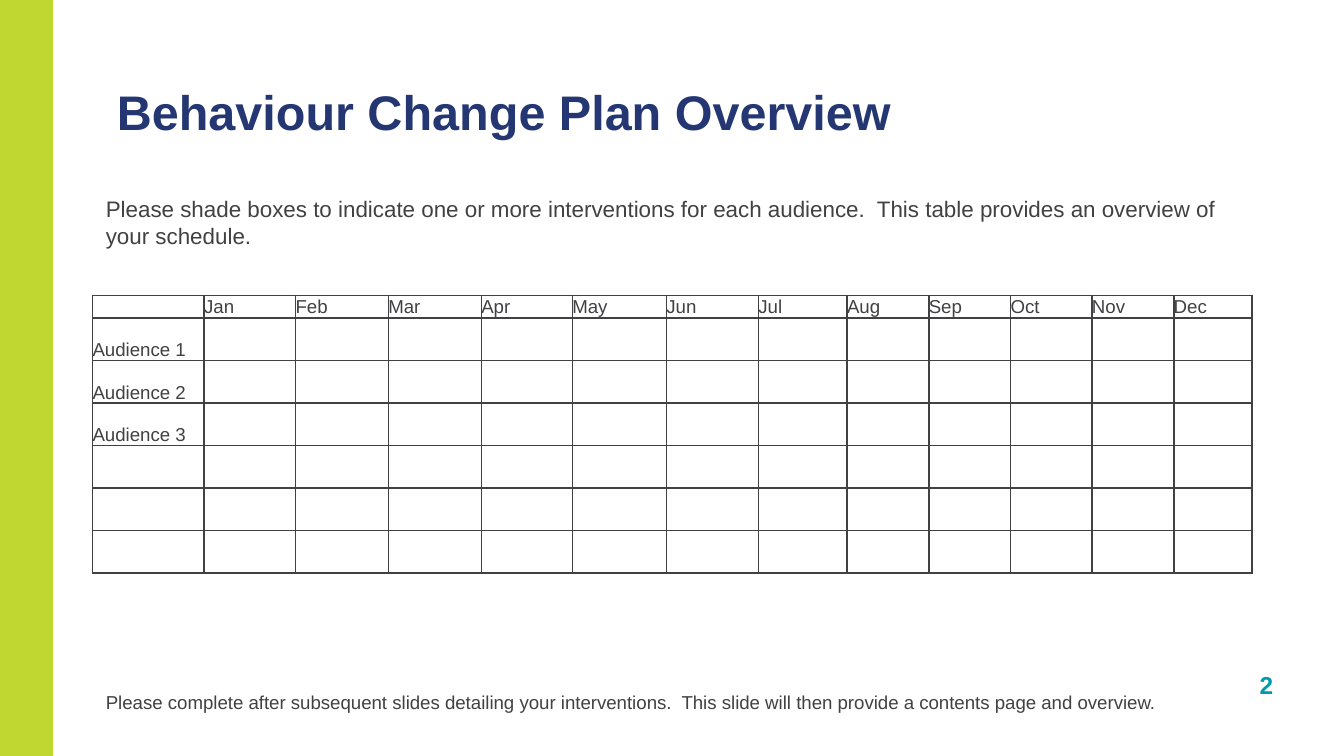
from lxml import etree
from pptx import Presentation
from pptx import util as u
from pptx.dml.color import RGBColor
from pptx.enum import shapes, text
from pptx.oxml import ns

Pt = u.Pt
FONT = "Arial"
COLORS = {"lime": "C0D631", "navy": "253773", "teal": "009BA7", "grey": "414042"}
MONTHS = "Jan Feb Mar Apr May Jun Jul Aug Sep Oct Nov Dec".split()
AUDIENCES = ["Audience 1", "Audience 2", "Audience 3"]
COL_WIDTHS = [59.8, 49, 49.7, 49.8, 48.8, 50.4, 49.3, 47.5, 43.8, 43.8, 43.6, 43.8, 41.8]
HEADER_HEIGHT = 11.7
ROW_HEIGHT = 22.8
BODY_ROWS = 6


def rgb(name):
    return RGBColor.from_string(COLORS[name])


def write(tf, content, size=10, color="grey", bold=False, align=None,
          anchor=text.MSO_ANCHOR.TOP, margins=None):
    tf.word_wrap = True
    tf.vertical_anchor = anchor
    if margins is not None:
        tf.margin_left = tf.margin_right = tf.margin_top = tf.margin_bottom = Pt(margins)
    p = tf.paragraphs[0]
    p.alignment = align
    p.space_before = Pt(0)
    r = p.add_run()
    r.text = content
    r.font.name = FONT
    r.font.size = Pt(size)
    r.font.bold = bold
    r.font.color.rgb = rgb(color)


def add_text(s, left, top, width, height, content, **fmt):
    sp = s.shapes.add_textbox(Pt(left), Pt(top), Pt(width), Pt(height))
    write(sp.text_frame, content, **fmt)


def add_title(s, left, top, width, height, content, **fmt):
    sp = s.shapes.title
    sp.left, sp.top, sp.width, sp.height = Pt(left), Pt(top), Pt(width), Pt(height)
    write(sp.text_frame, content, **fmt)
    sp.text_frame.auto_size = text.MSO_AUTO_SIZE.NONE


def add_bar(s, left, top, width, height, color):
    sp = s.shapes.add_shape(shapes.MSO_SHAPE.RECTANGLE, Pt(left), Pt(top), Pt(width), Pt(height))
    sp.shadow.inherit = False
    sp.fill.solid()
    sp.fill.fore_color.rgb = rgb(color)
    sp.line.fill.background()


def set_borders(cell, color, width):
    tc_pr = cell._tc.get_or_add_tcPr()
    for side in ("a:lnL", "a:lnR", "a:lnT", "a:lnB"):
        ln = etree.SubElement(tc_pr, ns.qn(side), w=str(Pt(width)))
        fill = etree.SubElement(ln, ns.qn("a:solidFill"))
        etree.SubElement(fill, ns.qn("a:srgbClr"), val=COLORS[color])


def format_cell(cell, content):
    cell.margin_left = cell.margin_right = cell.margin_top = cell.margin_bottom = 0
    cell.vertical_anchor = text.MSO_ANCHOR.BOTTOM
    set_borders(cell, "grey", 1)
    cell.fill.background()
    p = cell.text_frame.paragraphs[0]
    if content:
        r = p.add_run()
        r.text = content
        r.font.name = FONT
        r.font.size = Pt(10)
        r.font.color.rgb = rgb("grey")
    else:
        etree.SubElement(p._p, ns.qn("a:endParaRPr"), sz="1000")


def add_schedule(s, left, top):
    labels = AUDIENCES + [""] * (BODY_ROWS - len(AUDIENCES))
    rows = [[""] + MONTHS] + [[label] + [""] * len(MONTHS) for label in labels]
    heights = [HEADER_HEIGHT] + [ROW_HEIGHT] * BODY_ROWS
    frame = s.shapes.add_table(len(rows), len(COL_WIDTHS), Pt(left), Pt(top),
                               Pt(sum(COL_WIDTHS)), Pt(sum(heights)))
    table = frame.table
    table.first_row = table.horz_banding = False
    for column, width in zip(table.columns, COL_WIDTHS):
        column.width = Pt(width)
    for row, height, contents in zip(table.rows, heights, rows):
        row.height = Pt(height)
        for cell, content in zip(row.cells, contents):
            format_cell(cell, content)


def main():
    prs = Presentation()
    prs.slide_width, prs.slide_height = Pt(720), Pt(405)
    s = prs.slides.add_slide(prs.slide_layouts[5])
    add_bar(s, -8.6, -2.9, 36.9, 411, "lime")
    add_text(s, 632.2, 355, 56.9, 23, "2", size=13.1, color="teal", bold=True,
             align=text.PP_ALIGN.RIGHT, anchor=text.MSO_ANCHOR.BOTTOM)
    add_title(s, 62.6, 43.9, 442, 31, "Behaviour Change Plan Overview", size=26,
              color="navy", bold=True, align=text.PP_ALIGN.LEFT,
              anchor=text.MSO_ANCHOR.BOTTOM, margins=0)
    add_schedule(s, 49.6, 158.3)
    add_text(s, 49.6, 101, 621.4, 36,
             "Please shade boxes to indicate one or more interventions for each audience.  "
             "This table provides an overview of your schedule.", size=12)
    add_text(s, 49.6, 366.6, 620.6, 19.4,
             "Please complete after subsequent slides detailing your interventions.  "
             "This slide will then provide a contents page and overview.")
    prs.save("out.pptx")


if __name__ == "__main__":
    main()
